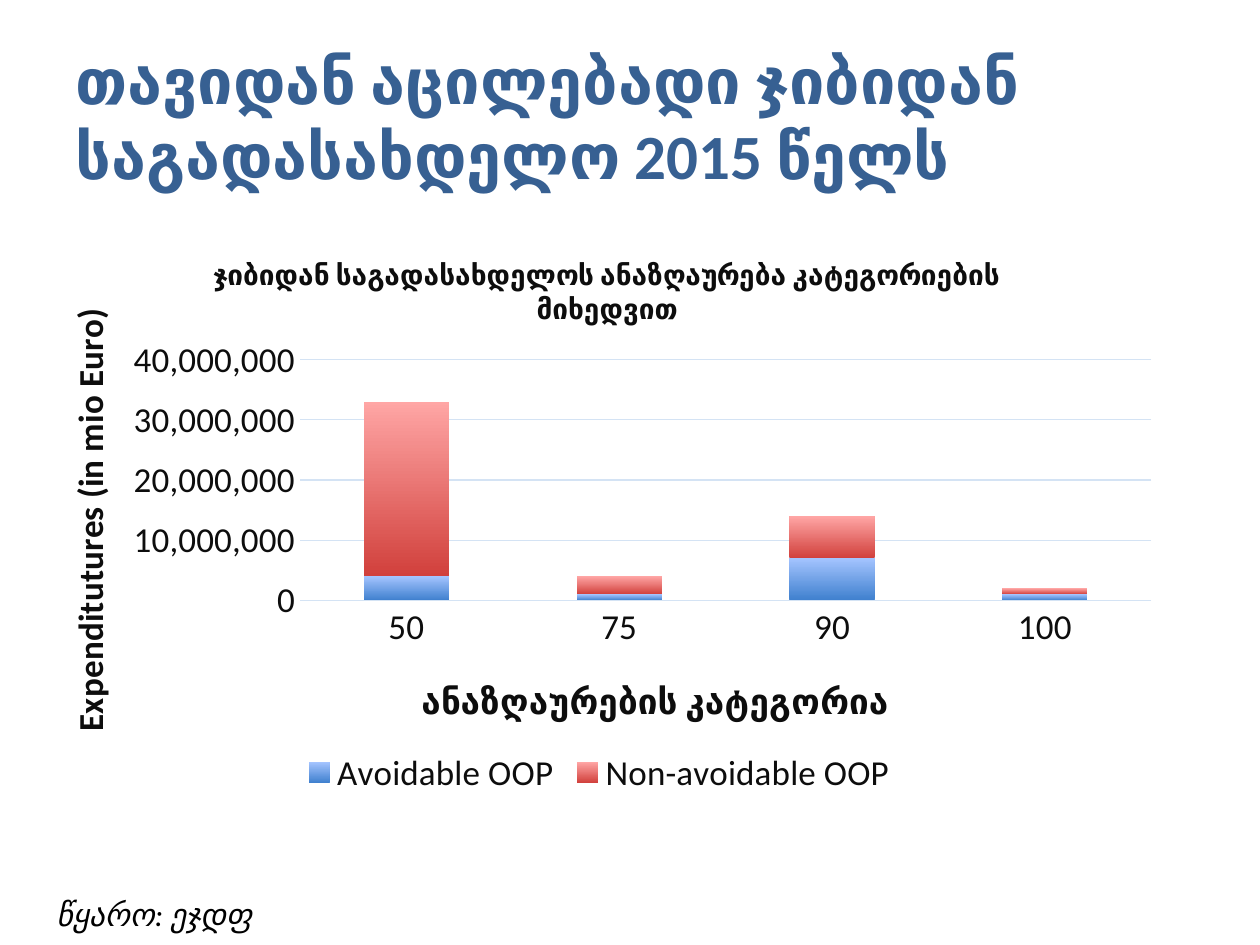
from lxml import etree
from pptx import Presentation
from pptx import util as u
from pptx.chart.data import CategoryChartData
from pptx.dml.color import RGBColor
from pptx.enum import chart as charts, text
from pptx.oxml.ns import qn

NAVY = RGBColor(0x37, 0x60, 0x92)
BLACK = RGBColor(0, 0, 0)
INK = RGBColor(0x0D, 0x0D, 0x0D)
GRID = RGBColor(0xD4, 0xE3, 0xF4)
BLUES = RGBColor(0x3F, 0x80, 0xCE), RGBColor(0xA4, 0xC4, 0xFF)
REDS = RGBColor(0xD1, 0x40, 0x3C), RGBColor(0xFF, 0xA6, 0xA5)

TITLE = "თავიდან აცილებადი ჯიბიდან საგადასახდელო 2015 წელს"
CHART_TITLE = "ჯიბიდან საგადასახდელოს ანაზღაურება კატეგორიების მიხედვით"
CATEGORY_TITLE = "ანაზღაურების კატეგორია"
VALUE_TITLE = "Expenditutures (in mio Euro)"
SOURCE = "წყარო: ეჯდფ"
CATEGORIES = ["50", "75", "90", "100"]
SERIES = [
    ("Avoidable OOP", (4000000, 1000000, 7000000, 1000000), BLUES),
    ("Non-avoidable OOP", (29000000, 3000000, 7000000, 1000000), REDS),
]
WIDTH, HEIGHT = u.Inches(10), u.Inches(7.5)
TITLE_BOX = 0.05, 0.04, 0.9, 0.167
CHART_BOX = 0.019, 0.241, 0.913, 0.607
SOURCE_BOX = 0.035, 0.941, 0.332, 0.053


def area(box):
    return [int(share * side) for share, side in zip(box, (WIDTH, HEIGHT) * 2)]


def format_font(font, size, color, **values):
    font.name = "Calibri"
    font.size = u.Pt(size)
    font.color.rgb = color
    for name, value in values.items():
        setattr(font, name, value)


def write(frame, wording, size, color, **values):
    frame.text = wording
    format_font(frame.paragraphs[0].runs[0].font, size, color, **values)


def place(element, after, **settings):
    for old in element.findall(qn("c:layout")):
        element.remove(old)
    layout = etree.Element(qn("c:layout"))
    manual = etree.SubElement(layout, qn("c:manualLayout"))
    for name, value in settings.items():
        etree.SubElement(manual, qn("c:" + name)).set("val", str(value))
    position = 0 if after is None else element.index(element.find(qn(after))) + 1
    element.insert(position, layout)


def place_title(title, x, y):
    place(title._element, "c:tx", xMode="edge", yMode="edge", x=x, y=y)


def format_line(line):
    line.color.rgb = GRID
    line.width = u.Pt(0.75)


def add_spending_chart(slide):
    data = CategoryChartData(number_format="#,##0")
    data.categories = CATEGORIES
    for name, values, _ in SERIES:
        data.add_series(name, values)
    chart = slide.shapes.add_chart(
        charts.XL_CHART_TYPE.COLUMN_STACKED, *area(CHART_BOX), data).chart
    format_font(chart.font, 20, INK)

    plot = chart.plots[0]
    plot.gap_width, plot.overlap, plot.vary_by_categories = 150, 100, False
    for series, (_, _, colors) in zip(plot.series, SERIES):
        fill = series.format.fill
        fill.gradient()
        fill.gradient_angle = 90
        for stop, color, position in zip(fill.gradient_stops, colors, (0, 1)):
            stop.color.rgb = color
            stop.position = position

    category, value = chart.category_axis, chart.value_axis
    titles = [
        (chart, "chart_title", CHART_TITLE, 16, 0.16, 0.04),
        (category, "axis_title", CATEGORY_TITLE, 20, 0.34, 0.77),
        (value, "axis_title", VALUE_TITLE, 20, 0.03, 0.13),
    ]
    for owner, kind, wording, size, x, y in titles:
        title = getattr(owner, kind)
        write(title.text_frame, wording, size, INK, bold=True)
        place_title(title, x, y)
    value.axis_title.text_frame._txBody.bodyPr.set("rot", "-5400000")

    for axis in (category, value):
        axis.major_tick_mark = axis.minor_tick_mark = charts.XL_TICK_MARK.NONE
        format_font(axis.tick_labels.font, 20, INK)
    format_line(category.format.line)
    value.format.line.fill.background()
    format_line(value.major_gridlines.format.line)
    value.minimum_scale, value.maximum_scale, value.major_unit = 0, 40000000, 10000000
    value.tick_labels.number_format = "#,##0"
    value.tick_labels.number_format_is_linked = False

    chart.has_legend = True
    chart.legend.position = charts.XL_LEGEND_POSITION.BOTTOM
    chart.legend.include_in_layout = False
    format_font(chart.legend.font, 20, INK)
    place(plot._element.getparent(), None, layoutTarget="inner",
          xMode="edge", yMode="edge", x=0.24, y=0.23, w=0.74, h=0.42)


def main():
    presentation = Presentation()
    presentation.slide_width, presentation.slide_height = WIDTH, HEIGHT
    slide = presentation.slides.add_slide(presentation.slide_layouts[5])

    title = slide.shapes.title
    title.left, title.top, title.width, title.height = area(TITLE_BOX)
    title.text_frame.vertical_anchor = text.MSO_ANCHOR.MIDDLE
    write(title.text_frame, TITLE, 36, NAVY, bold=True)
    title.text_frame.paragraphs[0].alignment = text.PP_ALIGN.LEFT

    add_spending_chart(slide)

    source = slide.shapes.add_textbox(*area(SOURCE_BOX)).text_frame
    source.word_wrap = True
    source.auto_size = text.MSO_AUTO_SIZE.SHAPE_TO_FIT_TEXT
    write(source, SOURCE, 18, BLACK, italic=True)

    presentation.save("out.pptx")


if __name__ == "__main__":
    main()
